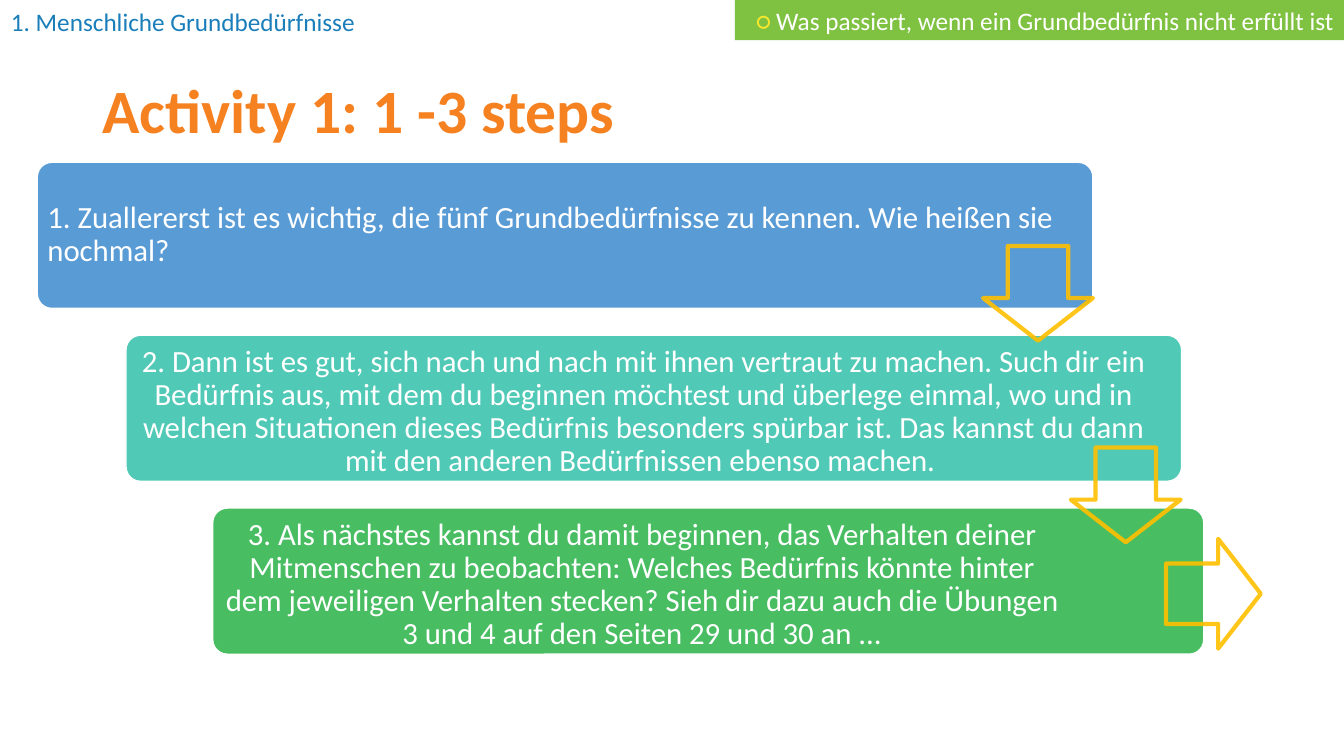
from lxml import etree
from pptx import Presentation
from pptx.dml.color import RGBColor
from pptx.enum.shapes import MSO_SHAPE
from pptx.enum.text import MSO_ANCHOR, PP_ALIGN
from pptx.oxml.ns import qn
from pptx.util import Inches, Pt

RECTANGLE = MSO_SHAPE.RECTANGLE
ROUNDED = MSO_SHAPE.ROUNDED_RECTANGLE
DOWN_ARROW = MSO_SHAPE.DOWN_ARROW
MIDDLE = MSO_ANCHOR.MIDDLE
LEFT, CENTER, RIGHT = PP_ALIGN.LEFT, PP_ALIGN.CENTER, PP_ALIGN.RIGHT

WHITE = RGBColor(0xFF, 0xFF, 0xFF)
HEADER_BLUE = RGBColor(0x1A, 0x7E, 0xBA)
ORANGE = RGBColor(0xF6, 0x81, 0x21)
STEP_BLUE = RGBColor(0x59, 0x9B, 0xD5)
STEP_TEAL = RGBColor(0x50, 0xC9, 0xB6)
STEP_GREEN = RGBColor(0x48, 0xBD, 0x62)
BANNER_GREEN = RGBColor(0x7F, 0xC2, 0x42)
YELLOW = RGBColor(0xFB, 0xE8, 0x2A)
GOLD = RGBColor(0xFF, 0xC0, 0x00)

STEP_TOP, STEP_PITCH, STEP_HEIGHT = 1.61, 1.715, 1.45
ARROW_LEFT, ARROW_PITCH = 9.75, 0.87

STEPS = [
    (0.37, 10.47, STEP_BLUE, (0.42, 1.65, 10.21, 1.37), LEFT,
     "1. Zuallererst ist es wichtig, die fünf Grundbedürfnisse zu kennen. "
     "Wie heißen sie nochmal?"),
    (1.25, 10.47, STEP_TEAL, (1.3, 3.37, 10.17, 1.44), CENTER,
     "2. Dann ist es gut, sich nach und nach mit ihnen vertraut zu machen. "
     "Such dir ein Bedürfnis aus, mit dem du beginnen möchtest und überlege "
     "einmal, wo und in welchen Situationen dieses Bedürfnis besonders spürbar "
     "ist. Das kannst du dann mit den anderen Bedürfnissen ebenso machen. "),
    (2.11, 9.83, STEP_GREEN, (2.16, 5.12, 8.42, 1.37), CENTER,
     "3. Als nächstes kannst du damit beginnen, das Verhalten deiner "
     "Mitmenschen zu beobachten: Welches Bedürfnis könnte hinter dem jeweiligen "
     "Verhalten stecken? Sieh dir dazu auch die Übungen 3 und 4 auf den Seiten "
     "29 und 30 an ..."),
]
ARROWS = [(2.44, 0), (4.44, 0), (5.42, 270)]


def add_box(slide, kind, box, fill=None):
    shape = slide.shapes.add_shape(kind, *map(Inches, box))
    shape.shadow.inherit = False
    if fill is None:
        shape.fill.background()
    else:
        shape.fill.solid()
        shape.fill.fore_color.rgb = fill
    shape.line.fill.background()
    return shape


def set_line(shape, color, width):
    shape.line.color.rgb = color
    shape.line.width = Pt(width)


def write_text(shape, runs, size, align=LEFT, spacing=1.0, bold=False):
    frame = shape.text_frame
    frame.word_wrap = True
    frame.vertical_anchor = MIDDLE
    paragraph = frame.paragraphs[0]
    paragraph.alignment = align
    paragraph.line_spacing = spacing
    paragraph.font.name = "Calibri"
    paragraph.font.size = Pt(size)
    paragraph.font.bold = bold
    for text, color in runs:
        run = paragraph.add_run()
        run.text = text
        run.font.color.rgb = color
    return paragraph


def add_header(slide, box, fill, runs, align):
    header = add_box(slide, RECTANGLE, box, fill)
    write_text(header, runs, 18, align)


def add_title(slide, text):
    title = slide.shapes.add_textbox(*map(Inches, (0.92, 0.4, 11.5, 1.45)))
    write_text(title, [(text, ORANGE)], 44, spacing=0.9, bold=True)


def add_step(slide, index, left, width, color, text_box, align, text):
    top = STEP_TOP + index * STEP_PITCH
    card = add_box(slide, ROUNDED, (left, top, width, STEP_HEIGHT), color)
    card.adjustments[0] = 0.1
    set_line(card, WHITE, 1)
    label = slide.shapes.add_textbox(*map(Inches, text_box))
    frame = label.text_frame
    frame.margin_left = frame.margin_right = Inches(0.05)
    frame.margin_top = frame.margin_bottom = Inches(0.05)
    paragraph = write_text(label, [(text, WHITE)], 22, align, 0.89)
    paragraph.space_after = Pt(8)


def add_arrow(slide, index, top, rotation):
    left = ARROW_LEFT + index * ARROW_PITCH
    arrow = add_box(slide, DOWN_ARROW, (left, top, 1.09, 0.94))
    arrow.adjustments[0] = 0.55
    arrow.adjustments[1] = 0.45
    arrow.rotation = rotation
    set_line(arrow, GOLD, 3)
    color = arrow.line._get_or_add_ln().find(".//" + qn("a:srgbClr"))
    etree.SubElement(color, qn("a:alpha")).set("val", "90000")


def main():
    presentation = Presentation()
    presentation.slide_width = Inches(13.33)
    presentation.slide_height = Inches(7.5)
    slide = presentation.slides.add_slide(presentation.slide_layouts[6])
    add_header(slide, (0.01, 0.01, 3.65, 0.4), WHITE,
               [("1. Menschliche Grundbedürfnisse", HEADER_BLUE)], LEFT)
    add_title(slide, "Activity 1: 1 -3 steps")
    for index, step in enumerate(STEPS):
        add_step(slide, index, *step)
    for index, arrow in enumerate(ARROWS):
        add_arrow(slide, index, *arrow)
    add_header(slide, (7.29, 0, 6.04, 0.4), BANNER_GREEN,
               [("○ ", YELLOW),
                ("Was passiert, wenn ein Grundbedürfnis nicht erfüllt ist", WHITE)],
               RIGHT)
    presentation.save("out.pptx")


if __name__ == "__main__":
    main()
